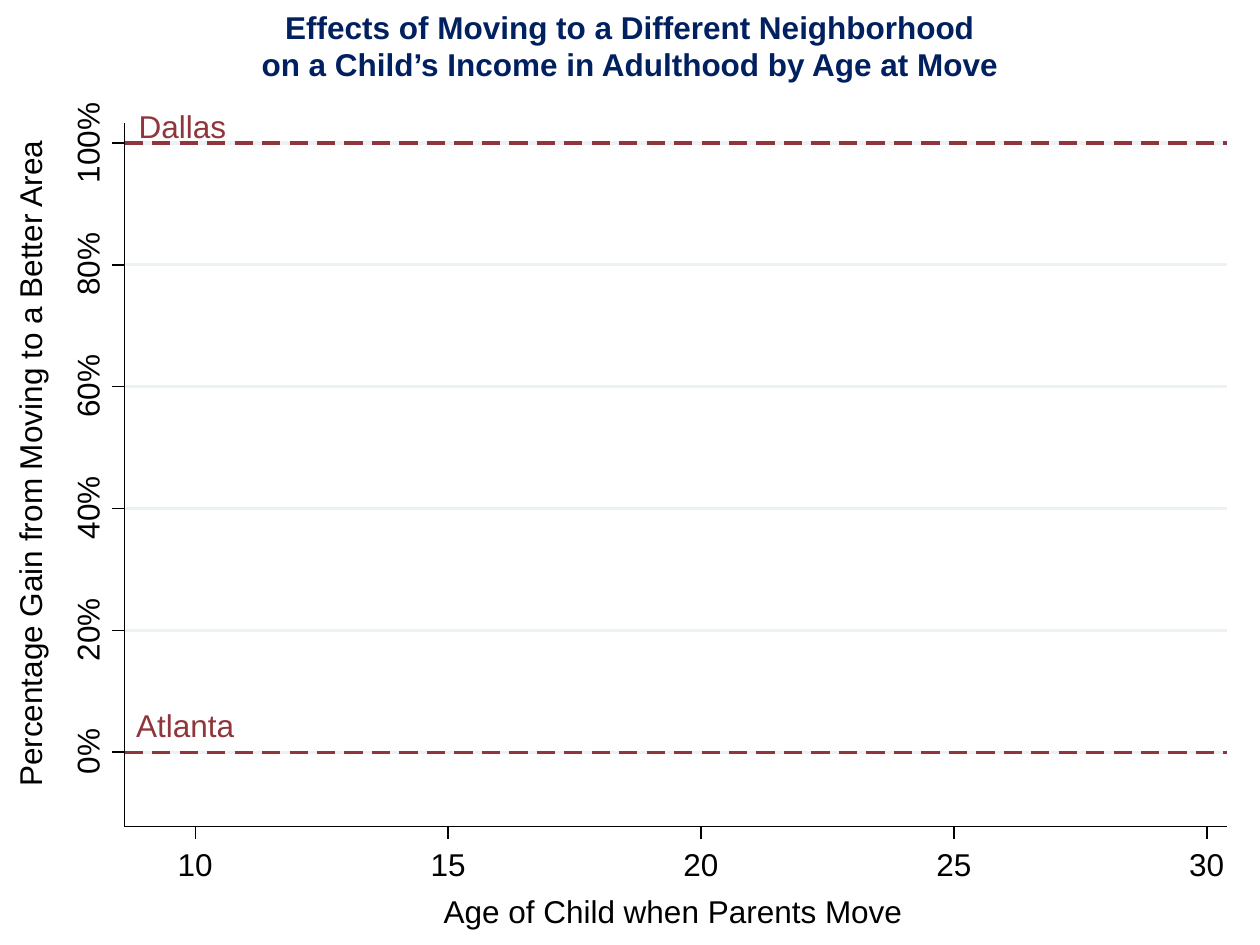
from lxml import etree
from pptx import Presentation
from pptx.dml.color import RGBColor
from pptx.enum import shapes, text
from pptx.oxml.ns import qn
from pptx.util import Inches, Pt

BLACK = RGBColor(0x00, 0x00, 0x00)
NAVY = RGBColor(0x00, 0x20, 0x60)
MAROON = RGBColor(0x90, 0x35, 0x3B)
PALE = RGBColor(0xEA, 0xF2, 0xF3)

TITLE = ["Effects of Moving to a Different Neighborhood",
         "on a Child’s Income in Adulthood by Age at Move"]
X_TITLE = "Age of Child when Parents Move"
Y_TITLE = "Percentage Gain from Moving to a Better Area"
GAINS = [("0%", 0.5), ("20%", 0.64), ("40%", 0.64),
         ("60%", 0.64), ("80%", 0.64), ("100%", 0.79)]  # label, box width
AGES = ["10", "15", "20", "25", "30"]
CITIES = [("Dallas", 1.1, 0.85, 0.7), ("Atlanta", 1.08, 5.6, 0.79)]

PLOT_LEFT, PLOT_RIGHT, PLOT_TOP, PLOT_BOTTOM = 0.99, 9.74, 0.98, 6.56
ZERO_Y, GAIN_STEP = 5.97, 0.967
FIRST_AGE_X, AGE_STEP = 1.55, 2.007
TICK = 0.1
DASH, DASH_PITCH, DASH_COUNT = 0.145, 0.218, 41
THIN, THICK = 0.88, 1.75
LABEL_HEIGHT = 0.36

presentation = Presentation()
presentation.slide_width, presentation.slide_height = Inches(10), Inches(7.5)
slide = presentation.slides.add_slide(presentation.slide_layouts[6])


def add_line(x1, y1, x2, y2, color=BLACK, width=THIN):
    line = slide.shapes.add_connector(
        shapes.MSO_CONNECTOR.STRAIGHT,
        Inches(x1), Inches(y1), Inches(x2), Inches(y2))
    line.line.color.rgb = color
    line.line.width = Pt(width)
    etree.SubElement(line._element.spPr, qn("a:effectLst"))


def add_text(lines, left, top, width, height=LABEL_HEIGHT, color=BLACK,
             rotation=0, bold=None, align=None, wrap=False):
    box = slide.shapes.add_textbox(
        Inches(left), Inches(top), Inches(width), Inches(height))
    box.rotation = rotation
    frame = box.text_frame
    frame_format = {"margin_left": 0, "margin_top": 0, "margin_right": 0,
                    "margin_bottom": 0, "word_wrap": wrap,
                    "auto_size": text.MSO_AUTO_SIZE.SHAPE_TO_FIT_TEXT}
    for name, value in frame_format.items():
        setattr(frame, name, value)
    frame.text = "\n".join(lines)
    for paragraph in frame.paragraphs:
        paragraph.alignment = align
        font = paragraph.runs[0].font
        for name, value in {"name": "Arial", "size": Pt(18), "bold": bold}.items():
            setattr(font, name, value)
        font.color.rgb = color


gain_ys = [ZERO_Y - i * GAIN_STEP for i in range(len(GAINS))]

for y in gain_ys:
    add_line(PLOT_LEFT, y, PLOT_RIGHT, y, PALE, THICK)

add_line(PLOT_LEFT, PLOT_BOTTOM, PLOT_LEFT, PLOT_TOP)
for (label, width), y in zip(GAINS, gain_ys):
    add_line(PLOT_LEFT, y, PLOT_LEFT - TICK, y)
    add_text([label], 0.72 - width / 2, y - 0.255, width, rotation=270)

add_line(PLOT_LEFT, PLOT_BOTTOM, PLOT_RIGHT, PLOT_BOTTOM)
for i, label in enumerate(AGES):
    x = FIRST_AGE_X + i * AGE_STEP
    add_line(x, PLOT_BOTTOM, x, PLOT_BOTTOM + TICK)
    add_text([label], x - 0.14, 6.71, 0.41)

add_text([X_TITLE], 3.52, 7.08, 3.98)
add_text([Y_TITLE], -2.52, 3.28, 5.57, rotation=270)

for y in (gain_ys[-1], gain_ys[0]):
    for i in range(DASH_COUNT):
        x = PLOT_LEFT + i * DASH_PITCH
        add_line(x, y, min(x + DASH, PLOT_RIGHT), y, MAROON, THICK)

add_text(TITLE, 0, 0.06, 10, 0.61, color=NAVY, bold=True,
         align=text.PP_ALIGN.CENTER, wrap=True)
for city, left, top, width in CITIES:
    add_text([city], left, top, width, 0.3, color=MAROON)

presentation.save("out.pptx")
